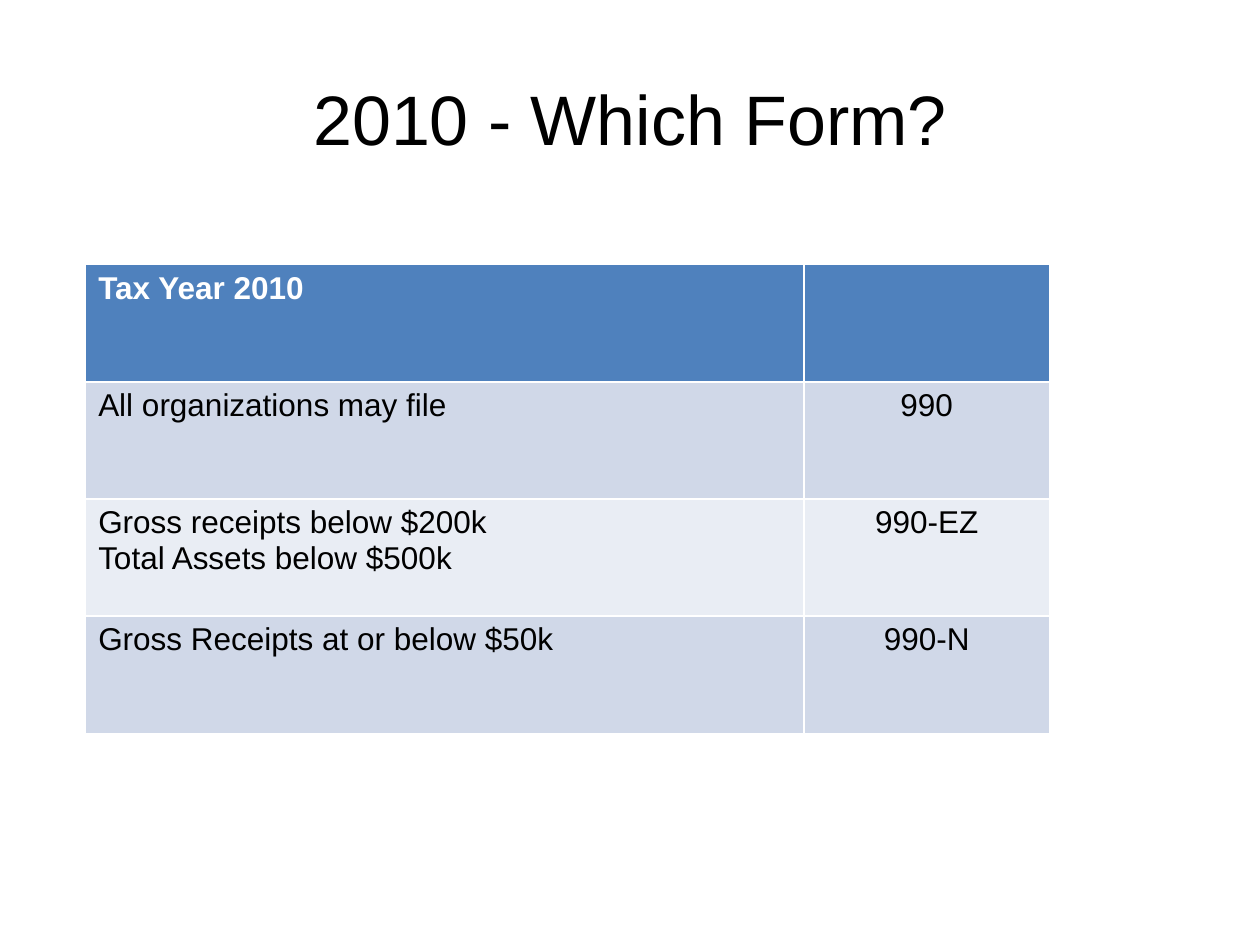
from dataclasses import dataclass

from pptx import Presentation
from pptx.dml.color import RGBColor
from pptx.enum.text import MSO_ANCHOR, PP_ALIGN
from pptx.util import Inches, Pt

LEFT, CENTER = PP_ALIGN.LEFT, PP_ALIGN.CENTER
MIDDLE = MSO_ANCHOR.MIDDLE


@dataclass(frozen=True)
class Theme:
    font: str = "Arial"
    title_size: int = 40
    cell_size: int = 18
    dark: str = "000000"
    light: str = "FFFFFF"
    head: str = "4F81BD"
    bands: tuple[str, str] = ("D0D8E8", "E9EDF4")


@dataclass(frozen=True)
class Row:
    rule: str
    form: str


THEME = Theme()
COLUMNS = (5.7, 1.95)
ROW_HEIGHT = 0.93
ROWS = (
    Row("Tax Year 2010", ""),
    Row("All organizations may file", "990"),
    Row("Gross receipts below $200k\nTotal Assets below $500k", "990-EZ"),
    Row("Gross Receipts at or below $50k", "990-N"),
)


def write(frame, text: str, *, size: int, color: str = THEME.dark,
          bold: bool = False, align=LEFT) -> None:
    """Fill a text frame, one paragraph per line of text."""
    frame.text = text
    for para in frame.paragraphs:
        para.alignment = align
        font = para.font
        font.name, font.size, font.bold = THEME.font, Pt(size), bold
        font.color.rgb = RGBColor.from_string(color)


def add_title(slide, text: str) -> None:
    box = slide.shapes.add_textbox(Inches(0), Inches(0.53), Inches(10), Inches(0.8))
    frame = box.text_frame
    frame.word_wrap = True
    frame.vertical_anchor = MIDDLE
    write(frame, text, size=THEME.title_size, align=CENTER)


def add_forms(slide, rows: tuple[Row, ...]) -> None:
    """Add the table; its default style draws the white rules."""
    table = slide.shapes.add_table(
        len(rows), len(COLUMNS), Inches(0.68), Inches(2.1),
        Inches(sum(COLUMNS)), Inches(ROW_HEIGHT * len(rows))).table
    for column, width in zip(table.columns, COLUMNS):
        column.width = Inches(width)
    for i, row in enumerate(rows):
        table.rows[i].height = Inches(ROW_HEIGHT)
        head = i == 0
        fill = THEME.head if head else THEME.bands[(i - 1) % 2]
        color = THEME.light if head else THEME.dark
        for j, (text, align) in enumerate(((row.rule, LEFT), (row.form, CENTER))):
            cell = table.cell(i, j)
            cell.fill.solid()
            cell.fill.fore_color.rgb = RGBColor.from_string(fill)
            write(cell.text_frame, text, size=THEME.cell_size, color=color,
                  bold=head, align=align)


def main() -> None:
    deck = Presentation()
    deck.slide_width, deck.slide_height = Inches(10), Inches(7.5)
    slide = deck.slides.add_slide(deck.slide_layouts[6])
    add_title(slide, "2010 - Which Form?")
    add_forms(slide, ROWS)
    deck.save("out.pptx")


if __name__ == "__main__":
    main()
